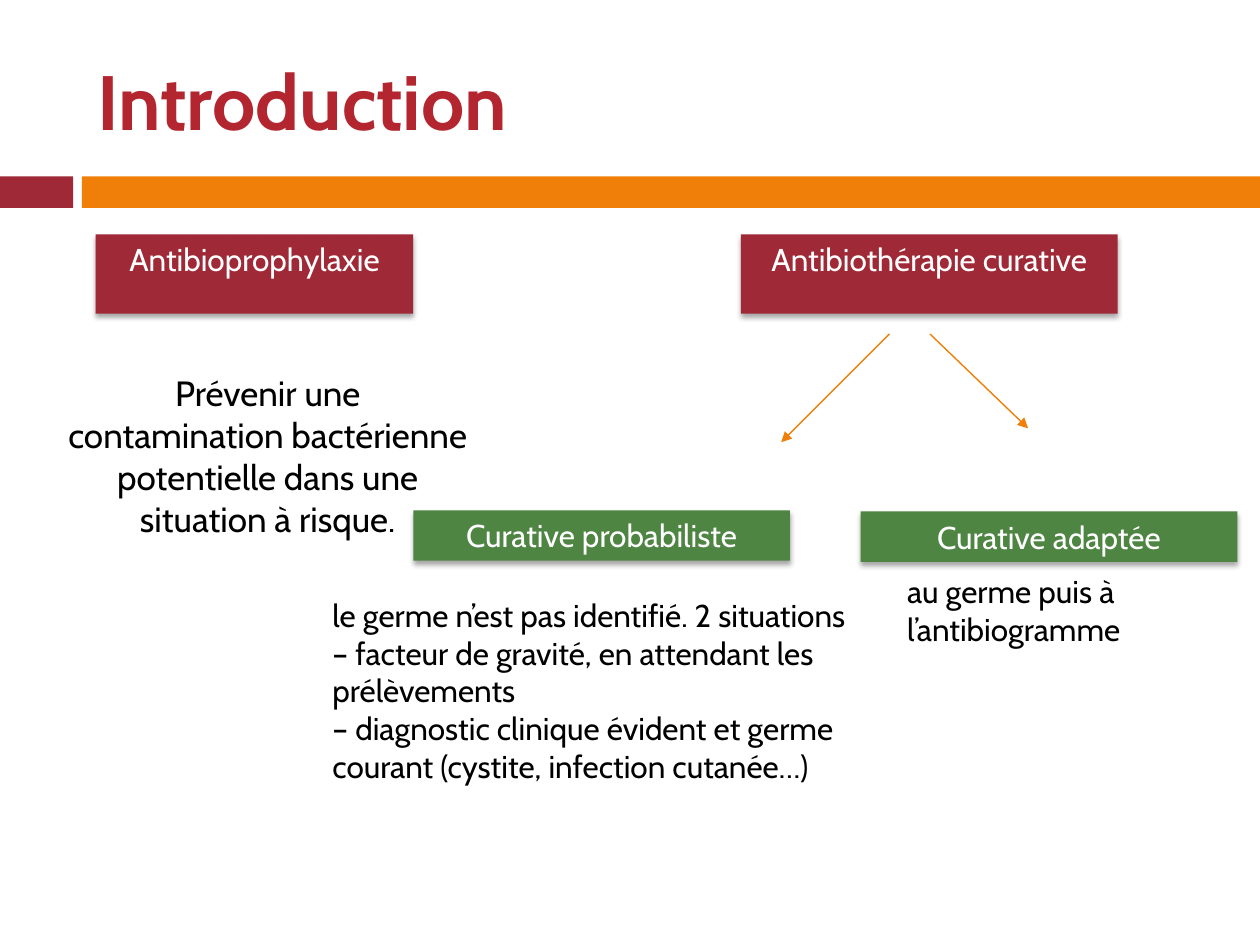
from typing import NamedTuple

from lxml.etree import SubElement
from pptx import Presentation
from pptx.dml.color import RGBColor
from pptx.enum.shapes import MSO_CONNECTOR, MSO_SHAPE
from pptx.enum.text import MSO_ANCHOR, PP_ALIGN
from pptx.oxml.ns import qn
from pptx.util import Inches, Pt

CRIMSON = RGBColor(0x9F, 0x29, 0x36)
ORANGE = RGBColor(0xF0, 0x7F, 0x09)
GREEN = RGBColor(0x4E, 0x85, 0x42)
TITLE_RED = RGBColor(0xB3, 0x26, 0x2F)
WHITE = RGBColor(0xFF, 0xFF, 0xFF)
BLACK = RGBColor(0, 0, 0)
FONT = "Cabin"

# The slide is a grid of 100 columns by 75 rows
COLUMNS, ROWS = 100, 75
CELL = Inches(10) // COLUMNS


class Area(NamedTuple):
    column: float
    row: float
    columns: float
    rows: float

    def lengths(self) -> list[int]:
        return [round(cells * CELL) for cells in self]


class Label(NamedTuple):
    text: str
    area: Area
    fill: RGBColor


class Note(NamedTuple):
    text: str
    area: Area
    size: int = 18
    align: PP_ALIGN = PP_ALIGN.LEFT


class Branch(NamedTuple):
    start: tuple[float, float]
    end: tuple[float, float]


BANDS = [
    (Area(0, 14, 5.8, 2.5), CRIMSON),
    (Area(6.5, 14, 93.5, 2.5), ORANGE),
]
LABELS = [
    Label("Antibioprophylaxie", Area(7.6, 18.6, 25.2, 6.3), CRIMSON),
    Label("Antibiothérapie curative", Area(58.8, 18.6, 29.9, 6.3), CRIMSON),
    Label("Curative probabiliste", Area(32.8, 40.5, 29.9, 4), GREEN),
    Label("Curative adaptée", Area(68.3, 40.6, 29.9, 4), GREEN),
]
NOTES = [
    Note("Prévenir une contamination bactérienne potentielle dans une situation à risque.",
         Area(4.3, 29, 33.9, 11.1), size=20, align=PP_ALIGN.CENTER),
    Note("le germe n’est pas identifié. 2 situations\n"
         "– facteur de gravité, en attendant les prélèvements\n"
         "– diagnostic clinique évident et germe courant (cystite, infection cutanée…)",
         Area(25.4, 46.8, 42.9, 16.2)),
    Note("au germe puis à l’antibiogramme", Area(71, 44.9, 29.9, 7.1)),
]
BRANCHES = [
    Branch((70.6, 26.5), (62, 35.1)),
    Branch((73.8, 26.5), (81.6, 34)),
]


def write(shape, text: str, *, size: int = 18, color: RGBColor = BLACK,
          bold: bool = False, align: PP_ALIGN = PP_ALIGN.LEFT,
          anchor: MSO_ANCHOR = MSO_ANCHOR.TOP) -> None:
    frame = shape.text_frame
    frame.word_wrap = True
    frame.vertical_anchor = anchor
    paragraph = frame.paragraphs[0]
    paragraph.text = text.replace("\n", "\v")
    paragraph.alignment = align
    for run in paragraph.runs:
        run.font.name = FONT
        run.font.size = Pt(size)
        run.font.bold = bold
        run.font.color.rgb = color


def add_block(slide, area: Area, fill: RGBColor):
    block = slide.shapes.add_shape(MSO_SHAPE.RECTANGLE, *area.lengths())
    block.shadow.inherit = False
    block.fill.solid()
    block.fill.fore_color.rgb = fill
    block.line.fill.background()
    return block


def add_label(slide, label: Label) -> None:
    block = add_block(slide, label.area, label.fill)
    write(block, label.text, color=WHITE, align=PP_ALIGN.CENTER)
    # Soft shadow straight below
    effects = block.element.spPr.find(qn("a:effectLst"))
    shadow = SubElement(effects, qn("a:outerShdw"), blurRad=str(Pt(3)),
                        dist=str(Pt(2)), dir="5400000", rotWithShape="0")
    tint = SubElement(shadow, qn("a:srgbClr"), val="000000")
    SubElement(tint, qn("a:alpha"), val="35000")


def add_note(slide, note: Note) -> None:
    box = slide.shapes.add_textbox(*note.area.lengths())
    write(box, note.text, size=note.size, align=note.align)


def add_branch(slide, branch: Branch) -> None:
    ends = [round(cells * CELL) for cells in branch.start + branch.end]
    arrow = slide.shapes.add_connector(MSO_CONNECTOR.STRAIGHT, *ends)
    arrow.line.color.rgb = ORANGE
    arrow.line.width = Pt(0.79)
    SubElement(arrow.line._get_or_add_ln(), qn("a:tailEnd"), type="triangle")
    SubElement(arrow.element.spPr, qn("a:effectLst"))


def main() -> None:
    deck = Presentation()
    deck.slide_width = COLUMNS * CELL
    deck.slide_height = ROWS * CELL
    slide = deck.slides.add_slide(deck.slide_layouts[5])

    # Title and the two-colour band below it
    title = slide.shapes.title
    title.left, title.top, title.width, title.height = Area(6.7, 2.5, 89.2, 10.8).lengths()
    write(title, "Introduction", size=44, color=TITLE_RED, bold=True,
          anchor=MSO_ANCHOR.MIDDLE)
    for area, fill in BANDS:
        add_block(slide, area, fill)

    # Kinds of treatment, their branches and explanations
    for label in LABELS:
        add_label(slide, label)
    for branch in BRANCHES:
        add_branch(slide, branch)
    for note in NOTES:
        add_note(slide, note)

    deck.save("out.pptx")


if __name__ == "__main__":
    main()
